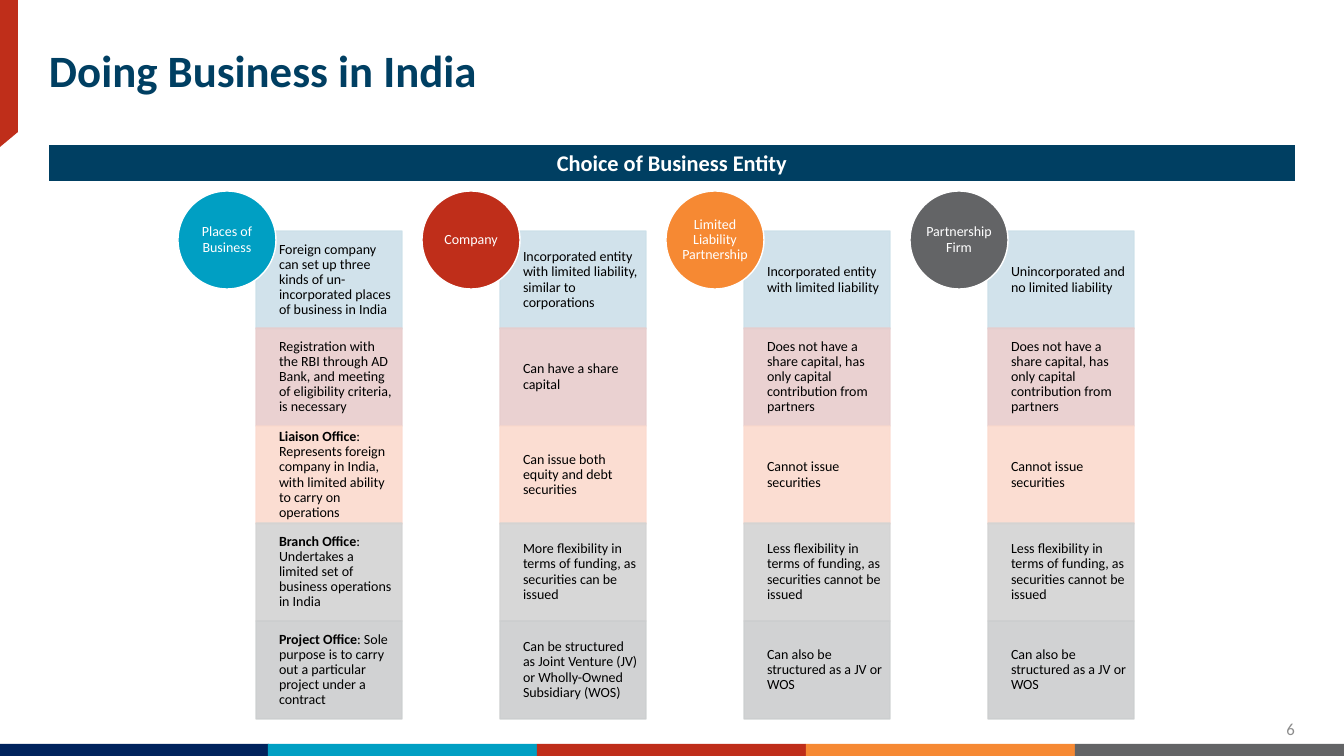
import pptx
import pptx.util
import pptx.dml.color
import pptx.enum.shapes
import pptx.enum.text
import lxml.etree

PX = 914400 / 100.8
WIDTH, HEIGHT = 1344, 756
SHAPE = pptx.enum.shapes.MSO_SHAPE
ALIGN = pptx.enum.text.PP_ALIGN
ANCHOR = pptx.enum.text.MSO_ANCHOR
COLORS = {
    "title": "003F62", "navy": "00235D", "blue": "009FC3", "red": "BF2E1A",
    "orange": "F68933", "gray": "636466", "white": "FFFFFF", "black": "000000",
    "number": "8C8C8C", "pale blue": "CCDFE9", "pale red": "E8CDCD",
    "pale orange": "FBDACE", "pale gray": "D3D3D3", "cool gray": "CCCECF",
}

prs = pptx.Presentation()
prs.slide_width = round(WIDTH * PX)
prs.slide_height = round(HEIGHT * PX)
s = prs.slides.add_slide(prs.slide_layouts[6])


def add_box(kind, box, fill=None, line=None, alpha=None):
    place = [round(v * PX) for v in box]
    if kind is None:
        return s.shapes.add_textbox(*place)
    sp = s.shapes.add_shape(kind, *place)
    sp.shadow.inherit = False
    sp.fill.solid()
    sp.fill.fore_color.rgb = pptx.dml.color.RGBColor.from_string(COLORS[fill])
    if line:
        sp.line.width = pptx.util.Pt(1)
        sp.line.color.rgb = pptx.dml.color.RGBColor.from_string(COLORS[line])
    else:
        sp.line.fill.background()
    if alpha:
        for clr in sp._element.spPr.iter(pptx.oxml.ns.qn("a:srgbClr")):
            lxml.etree.SubElement(clr, pptx.oxml.ns.qn("a:alpha"), val=str(alpha * 1000))
    return sp


def write(sp, runs, size, color, align=ALIGN.LEFT, anchor=ANCHOR.MIDDLE,
          insets=(0, 0, 0, 0), spacing=0.9):
    tf = sp.text_frame
    tf.word_wrap = True
    tf.vertical_anchor = anchor
    tf.margin_left, tf.margin_top, tf.margin_right, tf.margin_bottom = [
        round(v * PX) for v in insets]
    p = tf.paragraphs[0]
    p.alignment = align
    p.line_spacing = spacing
    for text, bold in runs:
        r = p.add_run()
        r.text = text
        r.font.name = "Calibri"
        r.font.size = pptx.util.Pt(size)
        r.font.bold = bold
        r.font.color.rgb = pptx.dml.color.RGBColor.from_string(COLORS[color])


fb = s.shapes.build_freeform(0, 0, scale=PX)
fb.add_line_segments([(0, 147), (18, 132), (18, 0)], close=True)
sp = fb.convert_to_shape()
sp.shadow.inherit = False
sp.fill.solid()
sp.fill.fore_color.rgb = pptx.dml.color.RGBColor.from_string(COLORS["red"])
sp.line.fill.background()

for i, fill in enumerate(["navy", "blue", "red", "orange", "gray"]):
    add_box(SHAPE.RECTANGLE, (i * WIDTH // 5, 744, 269, 12), fill)

write(add_box(None, (1227, 719, 68, 20)), [("6", False)], 12, "number",
      ALIGN.RIGHT, ANCHOR.BOTTOM, spacing=1.0)
write(add_box(None, (49, 49, 1060, 48)), [("Doing Business in India", True)], 32,
      "title", anchor=ANCHOR.TOP)
write(add_box(SHAPE.RECTANGLE, (49, 145, 1246, 36), "title"),
      [("Choice of Business Entity", True)], 16, "white", ALIGN.CENTER,
      insets=(10, 5, 10, 5), spacing=1.0)

no_share_capital = "Does not have a share capital, has only capital contribution from partners"
less_flexible = "Less flexibility in terms of funding, as securities cannot be issued"
also_structured = "Can also be structured as a JV or WOS"
entities = [
    ("Places of Business", "blue", [
        ("", "Foreign company can set up three kinds of un-incorporated places of business in India"),
        ("", "Registration with the RBI through AD Bank, and meeting of eligibility criteria, is necessary"),
        ("Liaison Office", ": Represents foreign company in India, with limited ability to carry on operations"),
        ("Branch Office", ": Undertakes a limited set of business operations in India"),
        ("Project Office", ": Sole purpose is to carry out a particular project under a contract"),
    ]),
    ("Company", "red", [
        ("", "Incorporated entity with limited liability, similar to corporations"),
        ("", "Can have a share capital"),
        ("", "Can issue both equity and debt securities"),
        ("", "More flexibility in terms of funding, as securities can be issued"),
        ("", "Can be structured as Joint Venture (JV) or Wholly-Owned Subsidiary (WOS)"),
    ]),
    ("Limited Liability Partnership", "orange", [
        ("", "Incorporated entity with limited liability"),
        ("", no_share_capital),
        ("", "Cannot issue securities"),
        ("", less_flexible),
        ("", also_structured),
    ]),
    ("Partnership Firm", "gray", [
        ("", "Unincorporated and no limited liability"),
        ("", no_share_capital),
        ("", "Cannot issue securities"),
        ("", less_flexible),
        ("", also_structured),
    ]),
]
row_fills = ["pale blue", "pale red", "pale orange", "pale gray", "cool gray"]

for col, (entity, color, features) in enumerate(entities):
    x = 178 + 244 * col
    for row, ((lead, text), fill) in enumerate(zip(features, row_fills)):
        cell = add_box(SHAPE.RECTANGLE, (x + 78, 231 + row * 195 // 2, 146, 98),
                       fill, fill, 90)
        runs = [(lead, True), (text, False)] if lead else [(text, False)]
        write(cell, runs, 10, "black", insets=(23, 8, 8, 8))
    circle = add_box(SHAPE.OVAL, (x, 191, 98, 98), color, "white")
    write(circle, [(entity, False)], 10, "white", ALIGN.CENTER)

prs.save("out.pptx")
